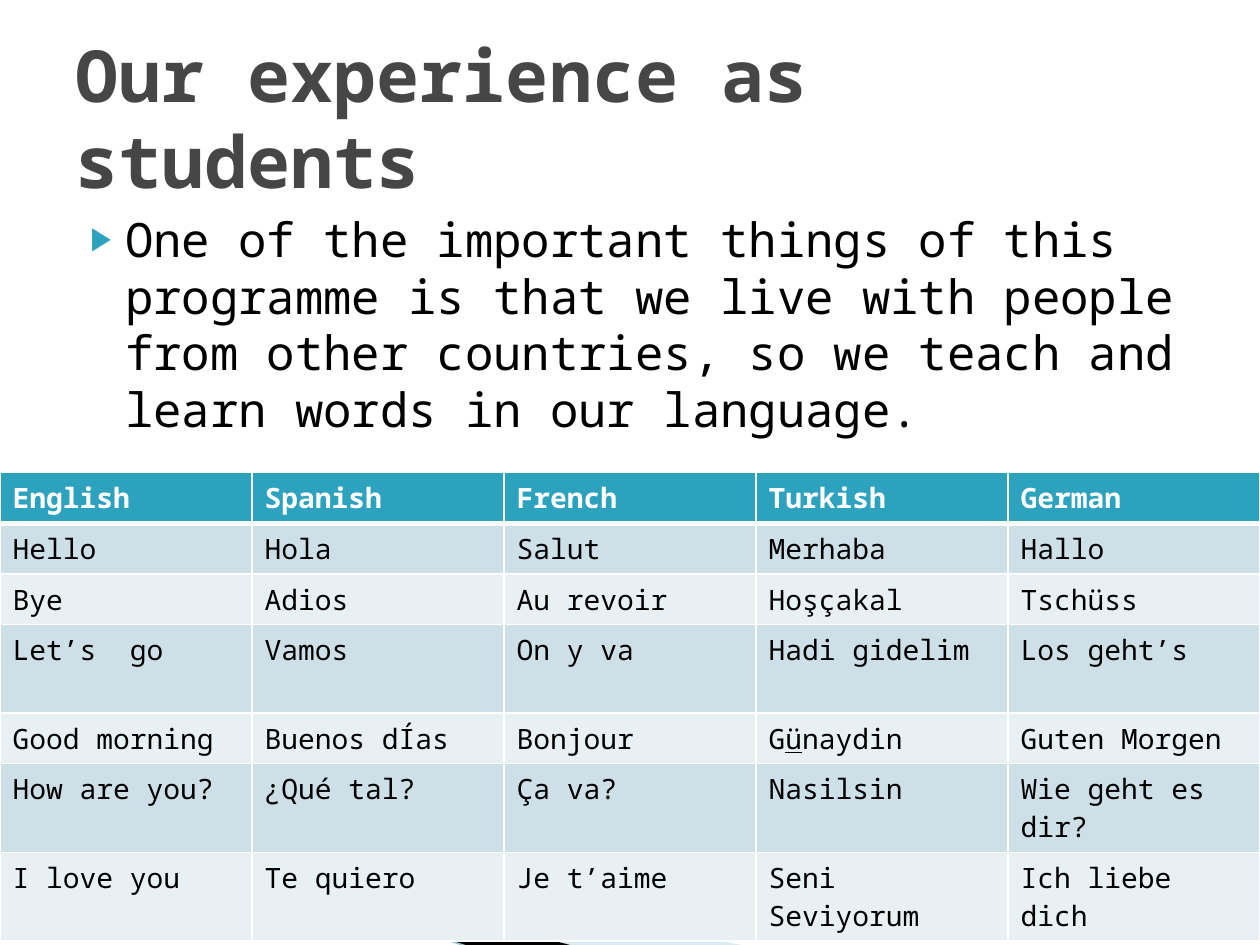
from lxml.etree import SubElement
from pptx import Presentation
from pptx.dml.color import RGBColor
from pptx.enum.shapes import MSO_CONNECTOR
from pptx.enum.text import MSO_ANCHOR, MSO_AUTO_SIZE, PP_ALIGN
from pptx.oxml.ns import qn
from pptx.util import Cm, Pt

FONT = "Noto Sans Mono"
COLORS = {
    "white": "FFFFFF", "black": "000000", "title": "464646", "accent": "2DA2BF",
    "band": "CDE0E8", "pale": "E8F0F4", "wave": "A0CBDC", "edge": "97C5D8",
}
PHRASES = [
    ["English", "Spanish", "French", "Turkish", "German"],
    ["Hello", "Hola", "Salut", "Merhaba", "Hallo"],
    ["Bye", "Adios", "Au revoir", "Hoşçakal", "Tschüss"],
    ["Let’s  go", "Vamos", "On y va", "Hadi gidelim", "Los geht’s"],
    ["Good morning", "Buenos dÍas", "Bonjour", ("G", "ü", "naydin"), "Guten Morgen"],
    ["How are you?", "¿Qué tal?", "Ça va?", "Nasilsin", "Wie geht es dir?"],
    ["I love you", "Te quiero", "Je t’aime", "Seni Seviyorum", "Ich liebe dich"],
]
ROW_HEIGHT, TALL_ROW, TALL_HEIGHT = 1.02, 3, 1.78


def rgb(name):
    return RGBColor.from_string(COLORS[name])


def style(para, size, color, bold=False):
    font = para.font
    font.name, font.size, font.bold = FONT, Pt(size), bold
    font.color.rgb = rgb(color)


def place(shape, box):
    shape.left, shape.top, shape.width, shape.height = (Cm(value) for value in box)


def reframe(shape, box):
    left, top = shape.left, shape.top
    place(shape, box)
    outline = shape._element.spPr.find(".//" + qn("a:path"))
    outline.set("w", str(shape.width))
    outline.set("h", str(shape.height))
    for point in outline.iter(qn("a:pt")):
        point.set("x", str(int(point.get("x")) + left - shape.left))
        point.set("y", str(int(point.get("y")) + top - shape.top))


def add_wave(page, box, points, color, opacity=None):
    start, *rest = [(Cm(x), Cm(y)) for x, y in points]
    builder = page.shapes.build_freeform(*start, scale=1.0)
    builder.add_line_segments(rest, close=True)
    wave = builder.convert_to_shape()
    reframe(wave, box)
    wave.shadow.inherit = False
    wave.fill.solid()
    wave.fill.fore_color.rgb = rgb(color)
    wave.line.fill.background()
    if opacity:
        tint = wave._element.spPr.find(".//" + qn("a:srgbClr"))
        SubElement(tint, qn("a:alpha"), val=str(opacity * 1000))


def add_corner(page, left, top, width, height):
    bottom = top + height
    add_wave(page, (left + 1.98, top - 2.19, 10.57, 4.01),
             [(left + 1.4, top + 0.46), (left + 15.11, bottom),
              (left + 11.58, bottom), (left + 1.4, top + 0.43)], "wave", 40)
    add_wave(page, (left - 0.15, top, 10.57, 2.34),
             [(left + 1.35, top + 0.4), (left + 11.61, bottom),
              (left + 9.45, bottom), (left + 1.37, top + 0.43)], "black")
    line = page.shapes.add_connector(
        MSO_CONNECTOR.STRAIGHT, Cm(left), Cm(top), Cm(left + width), Cm(bottom))
    line.line.color.rgb = rgb("edge")
    line.line.width = Pt(0.95)
    SubElement(line._element.spPr, qn("a:effectLst"))


def fill_body(page, box):
    body = page.placeholders[1]
    page.shapes._spTree.append(body._element)
    place(body, box)
    frame = body.text_frame
    frame.text = ("One of the important things of this programme is that we live with people "
                  "from other countries, so we teach and learn words in our language.")
    frame.auto_size = MSO_AUTO_SIZE.NONE
    para = frame.paragraphs[0]
    props = para._p.get_or_add_pPr()
    props.set("marL", str(Cm(1)))
    props.set("indent", str(Cm(-0.7)))
    para.space_before = Pt(0)
    SubElement(SubElement(props, qn("a:buClr")), qn("a:srgbClr"), val=COLORS["accent"])
    SubElement(props, qn("a:buSzPct"), val="68000")
    SubElement(props, qn("a:buChar"), char="▶")
    style(para, 27, "black")


def fill_title(page, box):
    title = page.shapes.title
    page.shapes._spTree.append(title._element)
    place(title, box)
    frame = title.text_frame
    frame.text = "Our experience as students"
    frame.auto_size = MSO_AUTO_SIZE.NONE
    frame.vertical_anchor = MSO_ANCHOR.MIDDLE
    para = frame.paragraphs[0]
    para.alignment = PP_ALIGN.LEFT
    style(para, 41, "title", True)


def add_borders(cell, header):
    props = cell._tc.get_or_add_tcPr()
    for index, side in enumerate(("lnL", "lnR", "lnT", "lnB")):
        width = Pt(3) if header and side == "lnB" else Pt(1)
        border = SubElement(props, qn("a:" + side), w=str(width))
        fill = SubElement(border, qn("a:solidFill"))
        SubElement(fill, qn("a:srgbClr"), val=COLORS["white"])
        props.insert(index, border)


def fill_cell(cell, content, row):
    header = row == 0
    cell.fill.solid()
    cell.fill.fore_color.rgb = rgb("accent" if header else "band" if row % 2 else "pale")
    add_borders(cell, header)
    para = cell.text_frame.paragraphs[0]
    parts = (content,) if isinstance(content, str) else content
    for index, part in enumerate(parts):
        span = para.add_run()
        span.text = part
        if index == 1:
            span.font.underline = True
    style(para, 16, "white" if header else "black", header)


def add_phrases(page, left, top, width):
    rows, columns = len(PHRASES), len(PHRASES[0])
    table = page.shapes.add_table(
        rows, columns, Cm(left), Cm(top), Cm(width), Cm(rows * ROW_HEIGHT)).table
    for row, phrases in enumerate(PHRASES):
        table.rows[row].height = Cm(TALL_HEIGHT if row == TALL_ROW else ROW_HEIGHT)
        for column, content in enumerate(phrases):
            fill_cell(table.cell(row, column), content, row)


def main():
    deck = Presentation()
    deck.slide_width, deck.slide_height = Cm(25.4), Cm(19.05)
    page = deck.slides.add_slide(deck.slide_layouts[1])
    add_corner(page, 0, 16.08, 9.42, 3)
    fill_body(page, (1.27, 4.11, 22.86, 12.57))
    fill_title(page, (1.27, 0.76, 22.86, 3.18))
    add_phrases(page, 0, 9.53, 25.4)
    deck.save("out.pptx")


if __name__ == "__main__":
    main()
